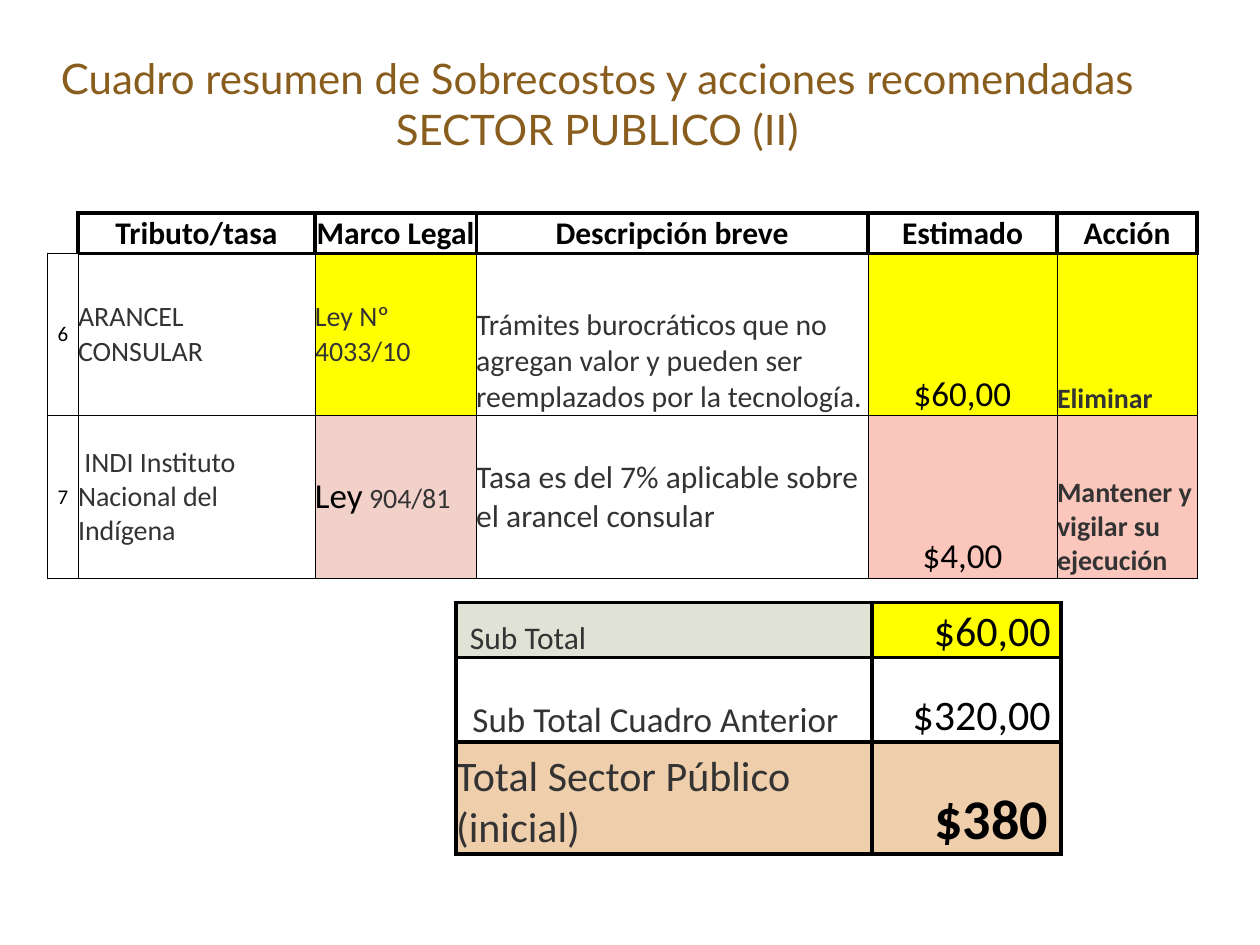
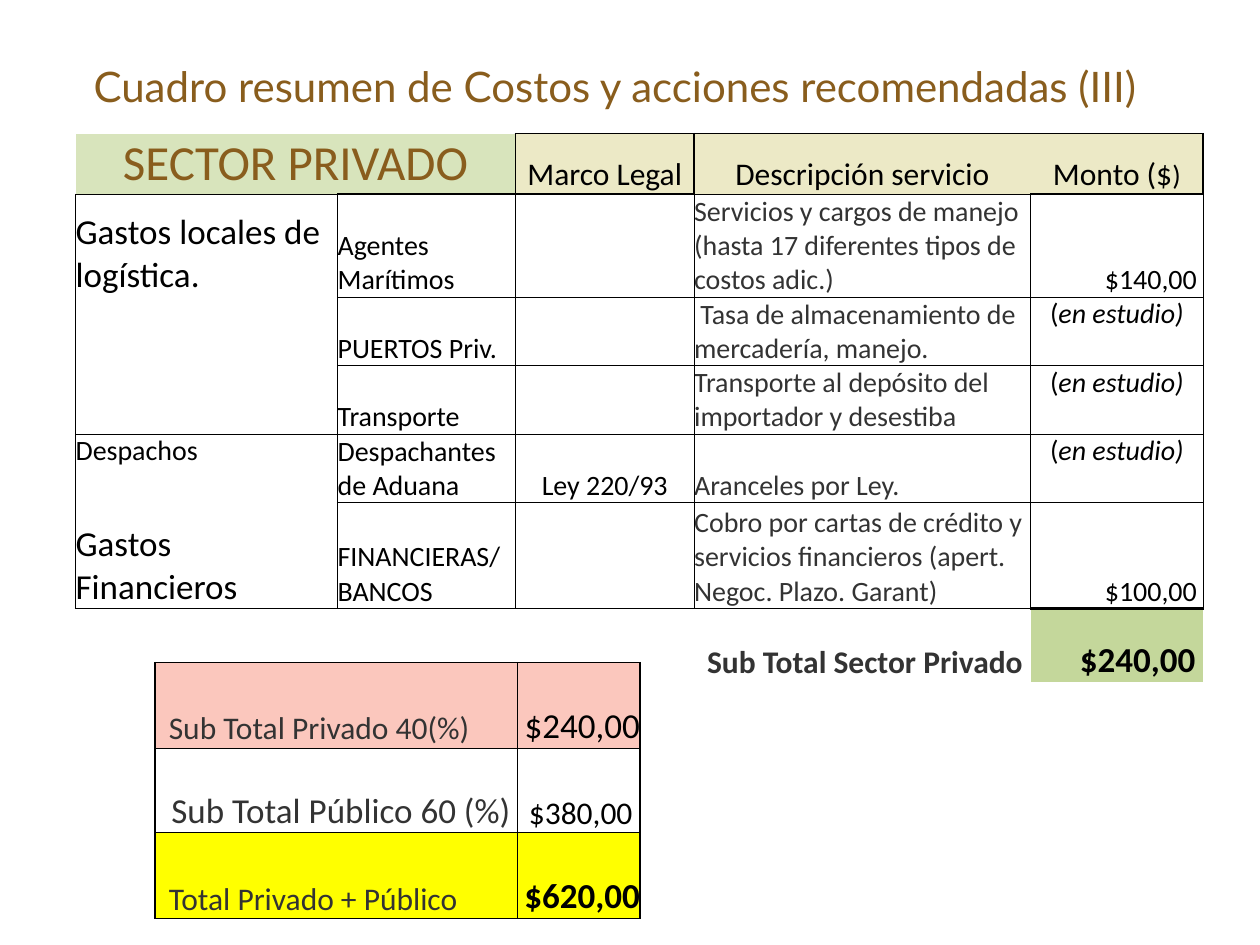
from lxml.etree import SubElement
from pptx import Presentation
from pptx.dml.color import RGBColor
from pptx.enum.text import MSO_ANCHOR as Anchor, PP_ALIGN as Align
from pptx.oxml.ns import qn
from pptx.util import Inches, Pt

COLORS = {
    "title": "895D1D", "ink": "000000", "text": "333333", "yellow": "FFFF00",
    "rose": "F1D1C9", "pink": "FBC7BD", "sage": "DFE2D5", "tan": "EFCFAB",
    "cream": "ECE9C6", "mint": "D8E4BC", "green": "C4D79B",
}
NO_STYLE = "{2D5ABB26-0587-4C30-8999-92F81FD0307C}"
NONE, THIN, THICK = (0,) * 4, (0.5,) * 4, (2.25,) * 4

deck = Presentation()
deck.slide_width, deck.slide_height = Inches(10), Inches(7.5)


def write(target, text, size=16, color="ink", bold=False, align=Align.LEFT,
          anchor=Anchor.BOTTOM, font="Calibri", left=0, right=0,
          fill=None, edges=None):
    frame = target.text_frame
    target.vertical_anchor = anchor
    target.margin_left, target.margin_right = Inches(left), Inches(right)
    target.margin_top = target.margin_bottom = 0
    paragraph = frame.paragraphs[0]
    paragraph.alignment = align
    for part, changes in [(text, {})] if isinstance(text, str) else text:
        look = {"size": size, "color": color, "italic": False} | changes
        for number, line in enumerate(part.split("\n")):
            if number:
                paragraph.add_line_break()
            if not line:
                continue
            run = paragraph.add_run()
            run.text = line
            run.font.name, run.font.size = font, Pt(look["size"])
            run.font.bold, run.font.italic = bold, look["italic"]
            run.font.color.rgb = RGBColor.from_string(COLORS[look["color"]])
    if edges is None:
        return
    properties = target._tc.get_or_add_tcPr()
    for side, width in zip("LRTB", edges):
        line = SubElement(properties, qn(f"a:ln{side}"), w=str(Pt(width)))
        if width:
            paint = SubElement(line, qn("a:solidFill"))
            SubElement(paint, qn("a:srgbClr"), val=COLORS["ink"])
        else:
            SubElement(line, qn("a:noFill"))
    if fill:
        target.fill.solid()
        target.fill.fore_color.rgb = RGBColor.from_string(COLORS[fill])
    else:
        target.fill.background()


def add_grid(slide, left, top, columns, rows):
    table = slide.shapes.add_table(
        len(rows), len(columns), Inches(left), Inches(top),
        Inches(sum(columns)), Inches(sum(rows))).table
    table.first_row = table.horz_banding = False
    table._tbl.tblPr.find(qn("a:tableStyleId")).text = NO_STYLE
    for column, width in zip(table.columns, columns):
        column.width = Inches(width)
    for row, height in zip(table.rows, rows):
        row.height = Inches(height)
    return table


slides = []
for heading, left, top, width in [
    ("Cuadro resumen de Sobrecostos y acciones recomendadas\nSECTOR PUBLICO (II)", 0.38, 0.41, 8.72),
    ("Cuadro resumen de Costos y acciones recomendadas (III)", 0.38, 0.27, 9),
]:
    slide = deck.slides.add_slide(deck.slide_layouts[5])
    title = slide.shapes.title
    title.left, title.top = Inches(left), Inches(top)
    title.width, title.height = Inches(width), Inches(0.82)
    frame = title.text_frame
    frame.word_wrap = True
    frame.vertical_anchor = Anchor.MIDDLE
    frame.margin_left = frame.margin_right = 0
    write_target = frame.paragraphs[0]
    write_target.alignment = Align.CENTER
    write_target.text = heading.replace("\n", "\v")
    for run in write_target.runs:
        run.font.name, run.font.size = "Lato", Pt(24)
        run.font.color.rgb = RGBColor.from_string(COLORS["title"])
    slides.append(slide)
public, private = slides

taxes = add_grid(public, 0.38, 1.69, [0.24, 1.88, 1.28, 3.11, 1.5, 1.11], [0.32, 1.29, 1.29])
write(taxes.cell(0, 0), "", edges=(0, 2.25, 0, 0.5))
for col, label in enumerate(["Tributo/tasa", "Marco Legal", "Descripción breve", "Estimado", "Acción"], 1):
    write(taxes.cell(0, col), label, size=18, bold=True, align=Align.CENTER, edges=THICK)

tax_rows = [
    ("6", "ARANCEL CONSULAR", [("Ley Nº 4033/10", {"color": "text"})],
     "Trámites burocráticos que no agregan valor y pueden ser reemplazados por la tecnología.",
     "$60,00", "Eliminar", 17, Anchor.BOTTOM, "yellow", "yellow"),
    ("7", " INDI Instituto Nacional del Indígena",
     [("Ley", {"size": 20}), (" 904/81", {"color": "text"})],
     "Tasa es del 7% aplicable sobre el arancel consular",
     "$4,00", "Mantener y vigilar su ejecución", 18, Anchor.MIDDLE, "rose", "pink"),
]
for row, (number, tax, law, detail, amount, action, size, anchor, law_fill, fill) in enumerate(tax_rows, 1):
    edges = (0.5, 0.5, 2.25 if row == 1 else 0.5, 0.5)
    cells = taxes.rows[row].cells
    write(cells[0], number, size=12, align=Align.CENTER, anchor=Anchor.MIDDLE, edges=THIN)
    write(cells[1], tax, color="text", anchor=Anchor.MIDDLE, edges=edges)
    write(cells[2], law, anchor=Anchor.MIDDLE, fill=law_fill, edges=edges)
    write(cells[3], detail, size=size, color="text", anchor=anchor, edges=edges)
    write(cells[4], amount, size=20, align=Align.CENTER, fill=fill, edges=edges)
    write(cells[5], action, color="text", bold=True, fill=fill, edges=edges)

summaries = [
    (public, 3.58, 4.78, [0.04, 3.3, 1.5], [0.44, 0.67, 0.89], 2.25, 2.25, [
        ("Sub Total", 18, 0.11, "sage", "$60,00", 24, 0.08, False, "yellow"),
        ("Sub Total Cuadro Anterior", 20, 0.13, None, "$320,00", 24, 0.08, False, None),
        ("Total Sector Público (inicial)", 24, 0, "tan", "$380", 32, 0.1, True, "tan")]),
    (private, 0.38, 5.26, [0.85, 2.88, 0.97], [0.68, 0.67, 0.68], 1, 0.5, [
        ("Sub Total Privado 40(%)", 18, 0.11, "pink", "$240,00", 20, 0, False, "pink"),
        ("Sub Total Público 60 (%)", 20, 0.13, None, "$380,00", 18, 0.06, False, None),
        ("Total Privado + Público", 18, 0.11, "yellow", "$620,00", 20, 0, True, "yellow")]),
]
for slide, left, top, columns, heights, outer, inner, lines in summaries:
    totals = add_grid(slide, left, top, columns, heights)
    for row, (label, size, indent, fill, amount, amount_size, gap, bold, amount_fill) in enumerate(lines):
        above = outer if row == 0 else inner
        below = outer if row == len(lines) - 1 else inner
        cells = totals.rows[row].cells
        write(cells[0], "", edges=(0, outer, 0, 0))
        write(cells[1], label, size=size, color="text", left=indent, fill=fill,
              edges=(outer, inner, above, below))
        write(cells[2], amount, size=amount_size, bold=bold, align=Align.RIGHT, right=gap,
              fill=amount_fill, edges=(inner, outer, above, below))

costs = add_grid(private, 0.6, 1.06, [2.08, 1.41, 1.42, 2.67, 1.37],
                 [0.48, 0.82, 0.54, 0.54, 0.54, 0.84, 0.58])
costs.cell(0, 0).merge(costs.cell(0, 1))
write(costs.cell(0, 0), "SECTOR PRIVADO", size=28, color="title", align=Align.CENTER,
      fill="mint", edges=(0, 1, 0, 0.25))
for col, (label, edges) in enumerate([
    ("Marco Legal", (1, 1, 1, 1)),
    ("Descripción servicio", (1, 0, 1, 0.5)),
    ([("Monto ($", {}), (")", {"size": 16})], (0, 1, 1, 1)),
], 2):
    write(costs.cell(0, col), label, size=18, align=Align.CENTER, fill="cream", edges=edges)

pending = [("(", {}), ("en estudio)", {"italic": True})]
cost_rows = [
    ("Gastos locales de logística.", 20, "Agentes Marítimos", "",
     "Servicios y cargos de manejo (hasta 17 diferentes tipos de costos adic.)", "$140,00"),
    ("", 16, "PUERTOS Priv.", "", " Tasa de almacenamiento de mercadería, manejo.", pending),
    ("", 16, "Transporte", "", "Transporte al depósito del importador y desestiba", pending),
    ("Despachos", 16, "Despachantes de Aduana", "Ley 220/93", "Aranceles por Ley.", pending),
    ("Gastos Financieros", 20, "FINANCIERAS/ BANCOS", "",
     "Cobro por cartas de crédito y servicios financieros (apert. Negoc. Plazo. Garant)", "$100,00"),
]
for row, (group, size, agent, law, service, amount) in enumerate(cost_rows, 1):
    side = 0.25 if row < 4 else 1
    first, last = row == 1, row == len(cost_rows)
    above = 1 if first else 0.5
    waiting = amount is pending
    cells = costs.rows[row].cells
    write(cells[0], group, size=size, anchor=Anchor.TOP if row == 4 else Anchor.BOTTOM,
          edges=(side, side, 0.25 if row in (1, 4) else 0, 1 if last else 0.25 if row == 3 else 0))
    write(cells[1], agent, edges=(side, 0.5, above, 1 if last else 0.5))
    write(cells[2], law, align=Align.CENTER, edges=(0.5, 0.5, above, 0.5))
    write(cells[3], service, color="text", edges=THIN)
    write(cells[4], amount, align=Align.CENTER if waiting else Align.RIGHT,
          anchor=Anchor.TOP if waiting else Anchor.BOTTOM, right=0 if waiting else 0.05,
          edges=(0.5, 0.5, above, 2 if last else 0.5))

closing = costs.rows[len(cost_rows) + 1].cells
for col, top_edge in enumerate([1, 1, 0.5]):
    write(closing[col], "", edges=(0, 0, top_edge, 0))
write(closing[3], "Sub Total Sector Privado", size=18, color="text", bold=True,
      align=Align.RIGHT, right=0.06, edges=(0, 0, 0.5, 0))
write(closing[4], "$240,00", size=20, bold=True, align=Align.RIGHT, right=0.06,
      fill="green", edges=(0, 0, 2, 0))

deck.save("out.pptx")
